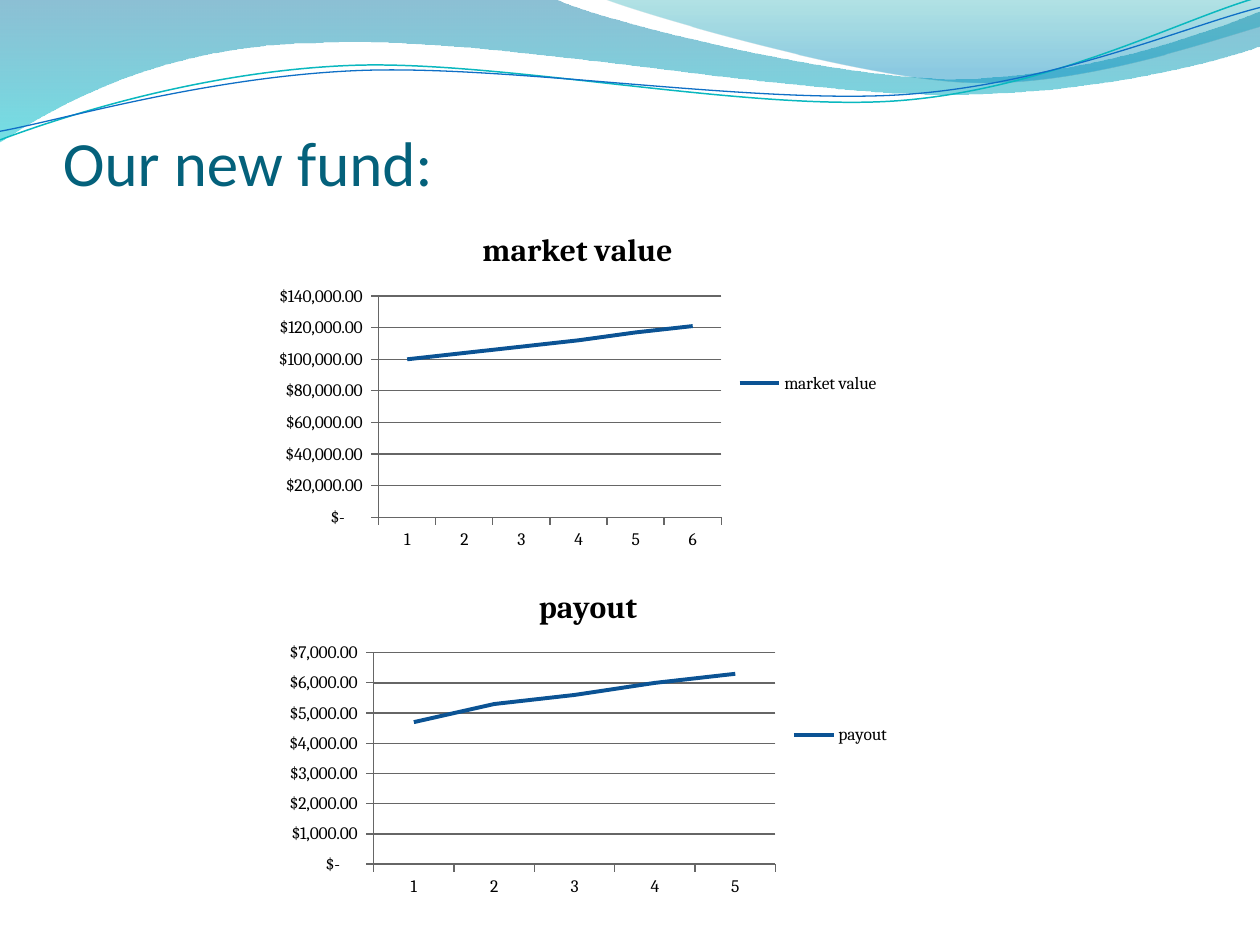
"""Build a slide with wave decoration, a title and two fund line charts."""
from dataclasses import dataclass
from typing import Any

from lxml.etree import SubElement
from pptx import Presentation
from pptx.chart.data import CategoryChartData
from pptx.dml.color import RGBColor
from pptx.enum.chart import XL_CHART_TYPE, XL_LEGEND_POSITION, XL_TICK_MARK
from pptx.enum.text import MSO_ANCHOR
from pptx.oxml.ns import qn
from pptx.util import Pt

BLACK = RGBColor(0x00, 0x00, 0x00)
GRID = RGBColor(0x66, 0x66, 0x66)
BLUE = RGBColor(0x0F, 0x6F, 0xC6)
AQUA = RGBColor(0x0A, 0xB8, 0xBF)
DEEP_TEAL = RGBColor(0x04, 0x61, 0x7B)
WAVE_BLUE = RGBColor(0x00, 0x74, 0xA1)
WAVE_CYAN = RGBColor(0x00, 0xC6, 0xCF)
CREST_TEAL = RGBColor(0x00, 0xA1, 0xA9)
CREST_BLUE = RGBColor(0x00, 0x8B, 0xBF)

LINE_TILT = 357.3
DOLLARS = '_("$"* #,##0.00_);_("$"* \\(#,##0.00\\);_("$"* "-"??_);_(@_)'
Point = tuple[float, float]
Segments = tuple[tuple[Point, ...], ...]


@dataclass(frozen=True)
class Stop:
    position: float
    color: RGBColor
    opacity: int


@dataclass(frozen=True)
class WaveArea:
    start: Point
    segments: Segments
    stops: tuple[Stop, Stop]


@dataclass(frozen=True)
class WaveLine:
    start: Point
    segments: Segments
    color: RGBColor
    width: float


@dataclass(frozen=True)
class FundChart:
    name: str
    left: float
    top: float
    height: float
    values: tuple[int, ...]


AREAS = (
    WaveArea((0, -0.7), (
        ((317, -0.7),),
        ((343, 12), (478, 45), (546, 45)),
        ((614, 45), (690, 19), (720, 6.5)),
        ((721, 26),),
        ((708, 32), (626, 55), (537, 54)),
        ((447, 54), (275, 20), (185, 24.5)),
        ((93, 25), (33, 60), (-0.7, 81.4)),
    ), (Stop(0, WAVE_BLUE, 45), Stop(1, WAVE_CYAN, 55))),
    WaveArea((345, -0.7), (
        ((366.5, 8), (491, 44.6), (553.7, 46.8)),
        ((616.3, 49.5), (692, 23), (720, 15)),
        ((720, 0),),
    ), (Stop(0, CREST_TEAL, 30), Stop(0.8, CREST_BLUE, 45))),
)

LINES = (
    WaveLine((-1.4, 63), (
        ((33.8, 51.7), (114.1, 29.4), (199.8, 29.9)),
        ((284.8, 30.3), (425.9, 67.2), (512.5, 64.8)),
        ((599.1, 62.3), (676.5, 25.7), (720.2, 15.6)),
    ), AQUA, 0.85),
    WaveLine((-1.1, 58), (
        ((32.9, 53.6), (118.2, 32.6), (204.1, 33)),
        ((290.3, 33.4), (428.9, 63.1), (515.5, 61.4)),
        ((601.4, 59.6), (678.4, 30), (721.4, 21.3)),
    ), BLUE, 0.75),
)

CHARTS = (
    FundChart("market value", 150, 120, 198,
              (100000, 104000, 108000, 112000, 117000, 121000)),
    FundChart("payout", 156, 324, 192, (4700, 5300, 5600, 6000, 6300)),
)


def set_attrs(obj: Any, values: dict[str, Any]) -> None:
    """Set every named attribute on the object."""
    for name, value in values.items():
        setattr(obj, name, value)


def set_font(font: Any, name: str, size: float, color: RGBColor, bold: bool = False) -> None:
    """Format a font."""
    set_attrs(font, {"name": name, "size": Pt(size), "bold": bold})
    font.color.rgb = color


def set_line(line: Any, color: RGBColor, width: float) -> None:
    """Format a line."""
    line.color.rgb = color
    line.width = Pt(width)


def add_curve(shapes: Any, start: Point, segments: Segments, close: bool) -> Any:
    """Add a freeform whose three-point segments are cubic curves."""
    builder = shapes.build_freeform(Pt(start[0]), Pt(start[1]))
    builder.add_line_segments([(Pt(x), Pt(y)) for seg in segments for x, y in seg], close=close)
    s = builder.convert_to_shape()
    s.shadow.inherit = False
    steps = iter(list(s.element.iter(qn("a:lnTo"))))
    for segment in segments:
        group = [next(steps) for _ in segment]
        if len(group) == 3:
            curve = group[0].makeelement(qn("a:cubicBezTo"))
            group[0].addprevious(curve)
            for step in group:
                curve.append(step[0])
                step.getparent().remove(step)
    return s


def draw_area(shapes: Any, area: WaveArea) -> None:
    """Draw a wave filled with a translucent vertical gradient."""
    s = add_curve(shapes, area.start, area.segments, close=True)
    s.line.fill.background()
    s.fill.gradient()
    s.fill.gradient_angle = 270
    for target, stop in zip(s.fill.gradient_stops, area.stops):
        target.position = stop.position
        target.color.rgb = stop.color
    for color, stop in zip(s.element.iter(qn("a:srgbClr")), area.stops):
        SubElement(color, qn("a:alpha")).set("val", str(stop.opacity * 1000))


def draw_line(shapes: Any, line: WaveLine) -> None:
    """Draw a tilted open wave line."""
    s = add_curve(shapes, line.start, line.segments, close=False)
    s.rotation = LINE_TILT
    s.fill.background()
    set_line(s.line, line.color, line.width)


def draw_chart(shapes: Any, fund: FundChart) -> None:
    """Draw a titled line chart with its legend on the right."""
    data = CategoryChartData()
    data.categories = [str(i + 1) for i in range(len(fund.values))]
    data.add_series(fund.name, fund.values)
    chart = shapes.add_chart(XL_CHART_TYPE.LINE_STACKED, Pt(fund.left), Pt(fund.top),
                             Pt(360), Pt(fund.height), data).chart
    set_font(chart.font, "Cambria", 10, BLACK)
    set_attrs(chart, {"has_title": True, "has_legend": True})
    r = chart.chart_title.text_frame.paragraphs[0].add_run()
    r.text = fund.name
    set_font(r.font, "Cambria", 18, BLACK, bold=True)
    set_attrs(chart.legend, {"position": XL_LEGEND_POSITION.RIGHT, "include_in_layout": False})
    for axis in (chart.category_axis, chart.value_axis):
        axis.major_tick_mark = XL_TICK_MARK.OUTSIDE
        set_line(axis.format.line, GRID, 0.75)
    set_line(chart.value_axis.major_gridlines.format.line, GRID, 0.75)
    set_attrs(chart.value_axis.tick_labels,
              {"number_format": DOLLARS, "number_format_is_linked": False})
    plot = chart.plots[0]
    plot.vary_by_categories = False
    series = plot.series[0]
    series.smooth = False
    set_line(series.format.line, BLUE, 2.25)
    series.format.line.color.brightness = -0.25


def draw_title(shapes: Any, text: str) -> None:
    """Draw the slide title."""
    tf = shapes.add_textbox(Pt(36), Pt(55.4), Pt(654), Pt(58.3)).text_frame
    set_attrs(tf, {"word_wrap": True, "vertical_anchor": MSO_ANCHOR.BOTTOM, "margin_left": Pt(0),
                   "margin_top": Pt(3.6), "margin_right": Pt(0), "margin_bottom": Pt(0)})
    r = tf.paragraphs[0].add_run()
    r.text = text
    set_font(r.font, "Calibri", 36, DEEP_TEAL)


prs = Presentation()
set_attrs(prs, {"slide_width": Pt(720), "slide_height": Pt(540)})
slide_shapes = prs.slides.add_slide(prs.slide_layouts[6]).shapes
for wave_area in AREAS:
    draw_area(slide_shapes, wave_area)
line_group = slide_shapes.add_group_shape()
for wave_line in LINES:
    draw_line(line_group.shapes, wave_line)
for fund_chart in CHARTS:
    draw_chart(slide_shapes, fund_chart)
draw_title(slide_shapes, "Our new fund:")
prs.save("out.pptx")
